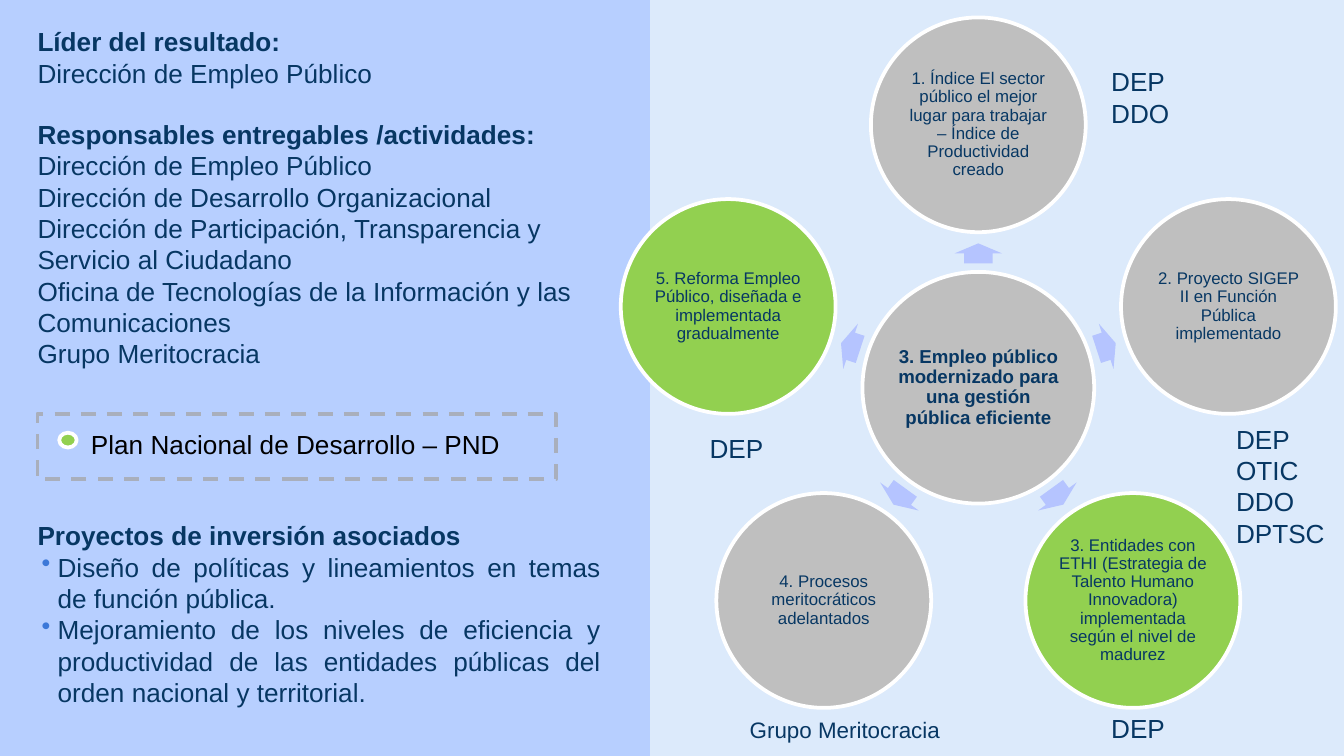
import math
from lxml import etree
from pptx import Presentation
from pptx import util as u
from pptx.dml.color import RGBColor
from pptx.enum import dml, shapes, text
from pptx.oxml.ns import qn

NAVY, GRAY, GREEN, WHITE = "073763", "BFBFBF", "92D050", "FFFFFF"
KIND = shapes.MSO_SHAPE
ALIGN = text.PP_ALIGN
HUB = (18.49, 7.33)

NODES = [
    ("1. Índice El sector público el mejor lugar para trabajar – Índice de Productividad creado", GRAY),
    ("2. Proyecto SIGEP II en Función Pública implementado", GRAY),
    ("3. Entidades con ETHI (Estrategia de Talento Humano Innovadora) implementada según el nivel de madurez", GREEN),
    ("4. Procesos meritocráticos adelantados", GRAY),
    ("5. Reforma Empleo Público, diseñada e implementada gradualmente", GREEN),
]
TEAMS = [
    "Dirección de Empleo Público",
    "Dirección de Desarrollo Organizacional",
    "Dirección de Participación, Transparencia y Servicio al Ciudadano",
    "Oficina de Tecnologías de la Información y las Comunicaciones",
    "Grupo Meritocracia",
]
GOALS = [
    "Diseño de políticas y lineamientos en temas de función pública.",
    "Mejoramiento de los niveles de eficiencia y productividad de las entidades públicas del orden nacional y territorial.",
]
LABELS = [
    ((20.75, 1.12, 2.29, 1.45), ["DEP", "DDO"], 14),
    ((23.11, 7.87, 2.29, 2.64), ["DEP", "OTIC", "DDO", "DPTSC"], 14),
    ((20.75, 13.34, 2.29, 0.86), ["DEP"], 14),
    ((13.16, 8.05, 2.29, 0.86), ["DEP"], 14),
    ((13.92, 13.41, 5.61, 0.76), ["Grupo Meritocracia"], 12),
]


def paint(target, color):
    if color is None:
        target.background()
    else:
        target.solid()
        target.fore_color.rgb = RGBColor.from_string(color)


def apply(target, **form):
    for name, value in form.items():
        setattr(target, name, value)


def write(par, words, size=14, bold=False, color=NAVY, **form):
    run = par.add_run()
    run.text = words
    apply(run.font, name="Arial", size=u.Pt(size), bold=bold)
    run.font.color.rgb = RGBColor.from_string(color)
    apply(par, **form)


def shape(slide, kind, box, fill=None, line=None):
    item = slide.shapes.add_shape(kind, *map(u.Cm, box))
    item.shadow.inherit = False
    paint(item.fill, fill)
    paint(item.line.fill, line)
    if line:
        item.line.width = u.Pt(2)
    return item


def textbox(slide, box):
    frame = slide.shapes.add_textbox(*map(u.Cm, box)).text_frame
    frame.word_wrap = True
    return frame


def lines(frame, rows, **form):
    for i, row in enumerate(rows):
        par = frame.add_paragraph() if i else frame.paragraphs[0]
        write(par, row, **form)


def bullet(par, color):
    props = par._p.get_or_add_pPr()
    props.set("marL", str(u.Cm(0.38)))
    props.set("indent", str(u.Cm(-0.3)))
    tint = etree.SubElement(props, qn("a:buClr"))
    etree.SubElement(tint, qn("a:srgbClr"), val=color)
    etree.SubElement(props, qn("a:buChar"), char="•")


def polar(angle, dist):
    turn = math.radians(angle)
    return HUB[0] + dist * math.cos(turn), HUB[1] + dist * math.sin(turn)


def circle(slide, mid, width, words, fill, **form):
    box = (mid[0] - width / 2, mid[1] - width / 2, width, width)
    item = shape(slide, KIND.OVAL, box, fill, WHITE)
    edge = u.Cm(0.03)
    apply(item.text_frame, word_wrap=True, vertical_anchor=text.MSO_ANCHOR.MIDDLE,
          margin_left=edge, margin_right=edge, margin_top=edge, margin_bottom=edge)
    write(item.text_frame.paragraphs[0], words, alignment=ALIGN.CENTER,
          line_spacing=0.9, **form)


def arrow(slide, angle):
    x, y = polar(angle, 2.54)
    item = shape(slide, KIND.RIGHT_ARROW, (x - 0.19, y - 0.45, 0.38, 0.9), "B5C4FF")
    item.rotation = angle
    item.adjustments[0] = 0.6


def wheel(slide):
    circle(slide, HUB, 4.38, "3. Empleo público modernizado para una gestión pública eficiente",
           GRAY, size=10, bold=True)
    for i, (words, fill) in enumerate(NODES):
        angle = (270 + i * 360 / len(NODES)) % 360
        arrow(slide, angle)
        circle(slide, polar(angle, 4.97), 4.06, words, fill, size=9)


def leads(slide):
    frame = textbox(slide, (0.46, 0.36, 11.79, 7.44))
    write(frame.paragraphs[0], "Líder del resultado:", bold=True)
    write(frame.add_paragraph(), TEAMS[0])
    write(frame.add_paragraph(), "Responsables entregables /actividades:", bold=True,
          space_before=u.Pt(16))
    for team in TEAMS:
        write(frame.add_paragraph(), team)


def projects(slide):
    frame = textbox(slide, (0.46, 9.7, 11.15, 3.84))
    write(frame.paragraphs[0], "Proyectos de inversión asociados", bold=True)
    for goal in GOALS:
        par = frame.add_paragraph()
        bullet(par, "3C78D8")
        write(par, goal, alignment=ALIGN.JUSTIFY)


def legend(slide):
    frame = shape(slide, KIND.RECTANGLE, (0.71, 7.82, 9.8, 1.24), line="A9AFBC")
    frame.line.dash_style = dml.MSO_LINE.DASH
    lines(textbox(slide, (1.47, 7.98, 9.19, 1.45)),
          ["Plan Nacional de Desarrollo – PND"], color="000000")
    shape(slide, KIND.OVAL, (1.12, 8.18, 0.33, 0.28), GREEN, WHITE)


def main():
    deck = Presentation()
    apply(deck, slide_width=u.Cm(25.4), slide_height=u.Cm(14.29))
    slide = deck.slides.add_slide(deck.slide_layouts[6])
    paint(slide.background.fill, "DCEAFB")
    shape(slide, KIND.RECTANGLE, (-0.03, 0, 12.29, 14.29), "B7CFFF", "B7CFFF")
    wheel(slide)
    leads(slide)
    projects(slide)
    for box, rows, size in LABELS:
        lines(textbox(slide, box), rows, size=size)
    legend(slide)
    deck.save("out.pptx")


if __name__ == "__main__":
    main()
